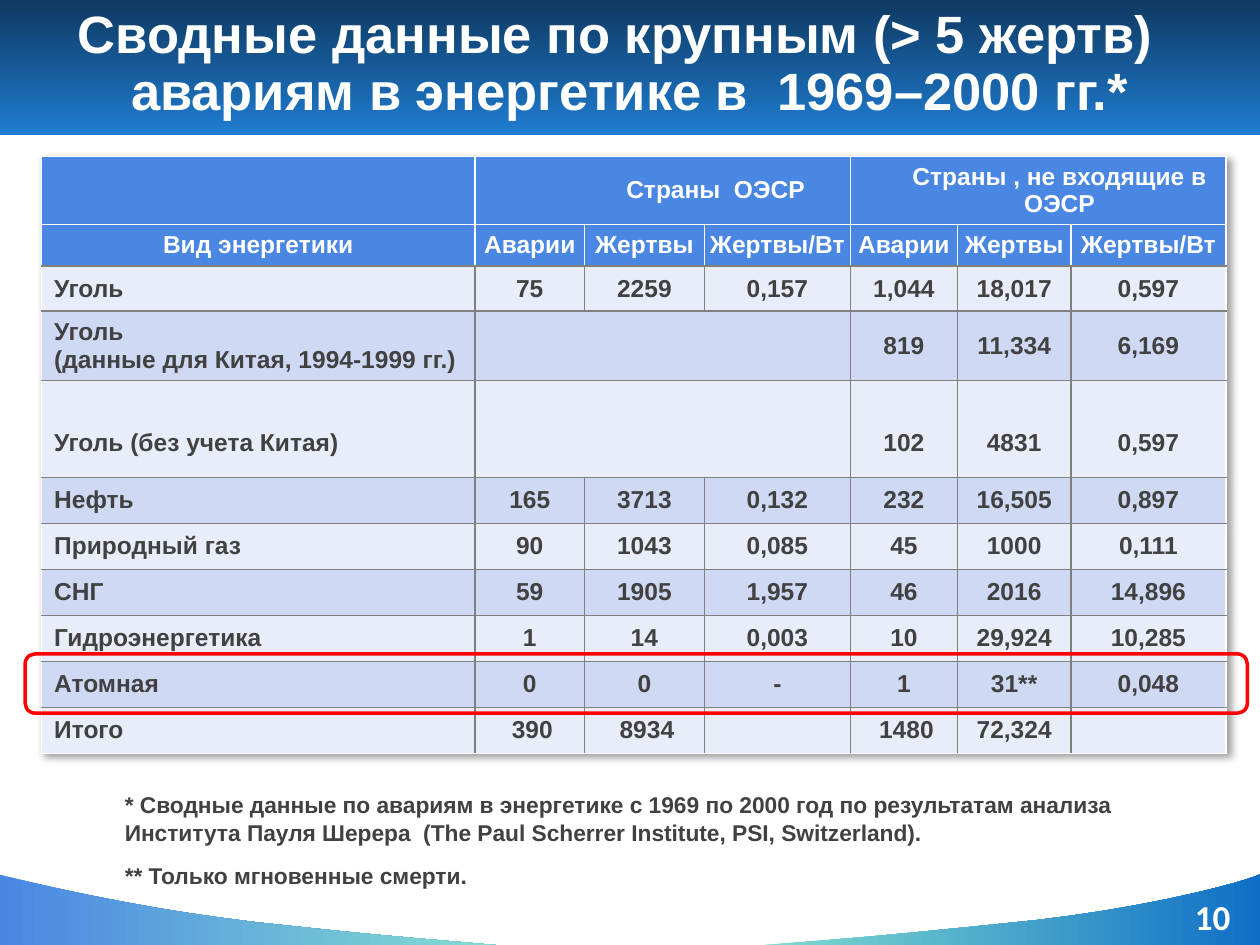
"""Builds a slide with a summary table of severe accidents in the energy sector."""
from lxml import etree
from pptx import Presentation
from pptx.dml.color import RGBColor
from pptx.enum.shapes import MSO_SHAPE
from pptx.enum.text import MSO_ANCHOR, PP_ALIGN
from pptx.oxml import parse_xml
from pptx.oxml.ns import nsdecls, qn
from pptx.util import Inches, Pt

WHITE = RGBColor(0xFF, 0xFF, 0xFF)
TEXT = RGBColor(0x41, 0x41, 0x41)
GRID = RGBColor(0x80, 0x80, 0x80)
RED = RGBColor(0xFF, 0x00, 0x00)
NAVY = RGBColor(0x0E, 0x39, 0x61)
BLUE = RGBColor(0x1F, 0x7C, 0xD1)
HEADER = RGBColor(0x49, 0x87, 0xE3)
TEAL = RGBColor(0x85, 0xDF, 0xD0)
DEEP_BLUE = RGBColor(0x0F, 0x6F, 0xC6)
LIGHT_ROW = RGBColor(0xE9, 0xED, 0xFA)
DARK_ROW = RGBColor(0xD0, 0xD9, 0xF4)


def style_gradient(shape, colors, angle):
    shape.shadow.inherit = False
    shape.line.fill.background()
    shape.fill.gradient()
    shape.fill.gradient_angle = angle
    for stop, color, position in zip(shape.fill.gradient_stops, colors, (0, 1)):
        stop.color.rgb = color
        stop.position = position


def style_text(frame, size, color, font_name="Arial", alignment=PP_ALIGN.LEFT):
    for paragraph in frame.paragraphs:
        paragraph.alignment = alignment
        paragraph.font.size = Pt(size)
        paragraph.font.bold = True
        paragraph.font.name = font_name
        paragraph.font.color.rgb = color


presentation = Presentation()
presentation.slide_width = Inches(10)
presentation.slide_height = Inches(7.5)
slide = presentation.slides.add_slide(presentation.slide_layouts[5])
shapes = slide.shapes

band = shapes.add_shape(MSO_SHAPE.RECTANGLE, 0, 0, Inches(10), Inches(1.07))
style_gradient(band, (NAVY, BLUE), 270)

waves = [
    ([(4.04, 7.51), (3.37, 7.45), (3.14, 7.44), (2.04, 7.32),
      (0.92, 7.19), (0, 6.94), (-0.01, 6.94)], -0.01, (HEADER, TEAL)),
    ([(5.94, 7.51), (6.6, 7.46), (6.88, 7.44), (7.96, 7.33),
      (9.05, 7.23), (9.91, 6.99), (10, 6.94)], 10, (TEAL, DEEP_BLUE)),
]
for controls, corner, colors in waves:
    points = []
    for start in (0, 3):
        curve = controls[start:start + 4]
        for step in range(1, 13):
            t = step / 12
            weights = ((1 - t) ** 3, 3 * t * (1 - t) ** 2, 3 * t ** 2 * (1 - t), t ** 3)
            points.append(tuple(
                Inches(sum(weight * point[axis] for weight, point in zip(weights, curve)))
                for axis in (0, 1)))
    points.append((Inches(corner), Inches(7.51)))
    builder = shapes.build_freeform(Inches(controls[0][0]), Inches(controls[0][1]))
    builder.add_line_segments(points, close=True)
    style_gradient(builder.convert_to_shape(), colors, 0)

title = shapes.title
title.element.getparent().append(title.element)
title.left, title.top, title.width, title.height = 0, Inches(-0.03), Inches(10), Inches(1.09)
title_frame = title.text_frame
title_frame.text = "Сводные данные по крупным (> 5 жертв)  \vавариям в энергетике в  1969–2000 гг.*"
title_frame.vertical_anchor = MSO_ANCHOR.MIDDLE
title_frame.margin_left = title_frame.margin_right = Inches(0.04)
title_frame.margin_top = title_frame.margin_bottom = Inches(0.04)
title_frame.paragraphs[0].line_spacing = 0.9
style_text(title_frame, 30, WHITE, alignment=PP_ALIGN.CENTER)

rows = [
    ("", "Страны  ОЭСР", "", "", "Страны , не входящие в ОЭСР", "", ""),
    ("Вид энергетики",) + ("Аварии", "Жертвы", "Жертвы/Вт") * 2,
    ("Уголь", "75", "2259", "0,157", "1,044", "18,017", "0,597"),
    ("Уголь\n(данные для Китая, 1994-1999 гг.)", "", "", "", "819", "11,334", "6,169"),
    ("Уголь (без учета Китая)", "", "", "", "102", "4831", "0,597"),
    ("Нефть", "165", "3713", "0,132", "232", "16,505", "0,897"),
    ("Природный газ", "90", "1043", "0,085", "45", "1000", "0,111"),
    ("СНГ", "59", "1905", "1,957", "46", "2016", "14,896"),
    ("Гидроэнергетика", "1", "14", "0,003", "10", "29,924", "10,285"),
    ("Атомная", "0", "0", "-", "1", "31**", "0,048"),
    ("Итого", "390", "8934", "", "1480", "72,324", ""),
]
column_widths = (3.44, 0.87, 0.95, 1.16, 0.85, 0.9, 1.23)
row_heights = (0.54, 0.33, 0.36, 0.55, 0.77) + (2.19 / 6,) * 6
last_row, last_column = len(rows) - 1, len(column_widths) - 1
no_china_row = 4

table = shapes.add_table(len(rows), len(column_widths), Inches(0.33), Inches(1.24),
                         Inches(sum(column_widths)), Inches(sum(row_heights))).table
for column, width in zip(table.columns, column_widths):
    column.width = Inches(width)
for row, height in zip(table.rows, row_heights):
    row.height = Inches(height)
table._tbl.tblPr.insert(0, parse_xml(
    f'<a:effectLst {nsdecls("a")}><a:outerShdw blurRad="50800" dist="38100" dir="2700000">'
    '<a:srgbClr val="000000"><a:alpha val="40000"/></a:srgbClr></a:outerShdw></a:effectLst>'))

for row_index, values in enumerate(rows):
    is_header = row_index < 2
    for column_index, value in enumerate(values):
        cell = table.cell(row_index, column_index)
        is_label = column_index == 0 and not is_header
        cell.text = value
        cell.vertical_anchor = MSO_ANCHOR.MIDDLE
        cell.margin_left = Inches(0.1 if is_label else 0)
        cell.margin_right = cell.margin_bottom = 0
        cell.margin_top = Inches(0.22 if row_index == no_china_row else 0)
        style_text(cell.text_frame, 14, WHITE if is_header else TEXT,
                   alignment=PP_ALIGN.LEFT if is_label else PP_ALIGN.CENTER)
        sides = {
            "lnL": WHITE if is_header or column_index == 0 else GRID,
            "lnR": WHITE if is_header or column_index == last_column else GRID,
            "lnT": WHITE if is_header else GRID,
            "lnB": WHITE if row_index in (0, last_row) else GRID,
        }
        properties = cell._tc.get_or_add_tcPr()
        for side, color in sides.items():
            border = etree.SubElement(properties, qn(f"a:{side}"), w=str(Pt(1)))
            solid = etree.SubElement(border, qn("a:solidFill"))
            etree.SubElement(solid, qn("a:srgbClr"), val=str(color))
        cell.fill.solid()
        cell.fill.fore_color.rgb = HEADER if is_header else (LIGHT_ROW, DARK_ROW)[row_index % 2]

for row_index, column_index in ((0, 1), (0, 4), (3, 1), (4, 1)):
    table.cell(row_index, column_index).merge(table.cell(row_index, column_index + 2))
table.cell(0, 1).margin_left = Inches(0.84)
table.cell(0, 4).margin_left = Inches(0.34)
for column_index in (1, 2, 4):
    table.cell(last_row, column_index).margin_left = Inches(0.04)

footnotes = (
    "* Сводные данные по авариям в энергетике с 1969 по 2000 год по результатам анализа "
    "Института Пауля Шерера  (The Paul Scherrer Institute, PSI, Switzerland).\n"
    "** Только мгновенные смерти."
)
text_boxes = [
    (footnotes, (0.99, 6.27, 8.02, 0.8), 13, TEXT, "Arial", PP_ALIGN.LEFT),
    ("10", (9.33, 7.11, 0.59, 0.35), 20, WHITE, "Calibri", PP_ALIGN.CENTER),
]
for text, bounds, size, color, font_name, alignment in text_boxes:
    frame = shapes.add_textbox(*map(Inches, bounds)).text_frame
    frame.word_wrap = True
    frame.margin_left = frame.margin_right = frame.margin_top = frame.margin_bottom = 0
    frame.text = text
    style_text(frame, size, color, font_name, alignment)
    for paragraph in frame.paragraphs[1:]:
        paragraph.space_before = Pt(8.8)
    if text == footnotes:
        frame.paragraphs[0].line_spacing = 1.03

highlight = shapes.add_shape(MSO_SHAPE.ROUNDED_RECTANGLE,
                             Inches(0.2), Inches(5.19), Inches(9.7), Inches(0.47))
highlight.shadow.inherit = False
highlight.fill.background()
highlight.line.color.rgb = RED
highlight.line.width = Pt(2)

presentation.save("out.pptx")
